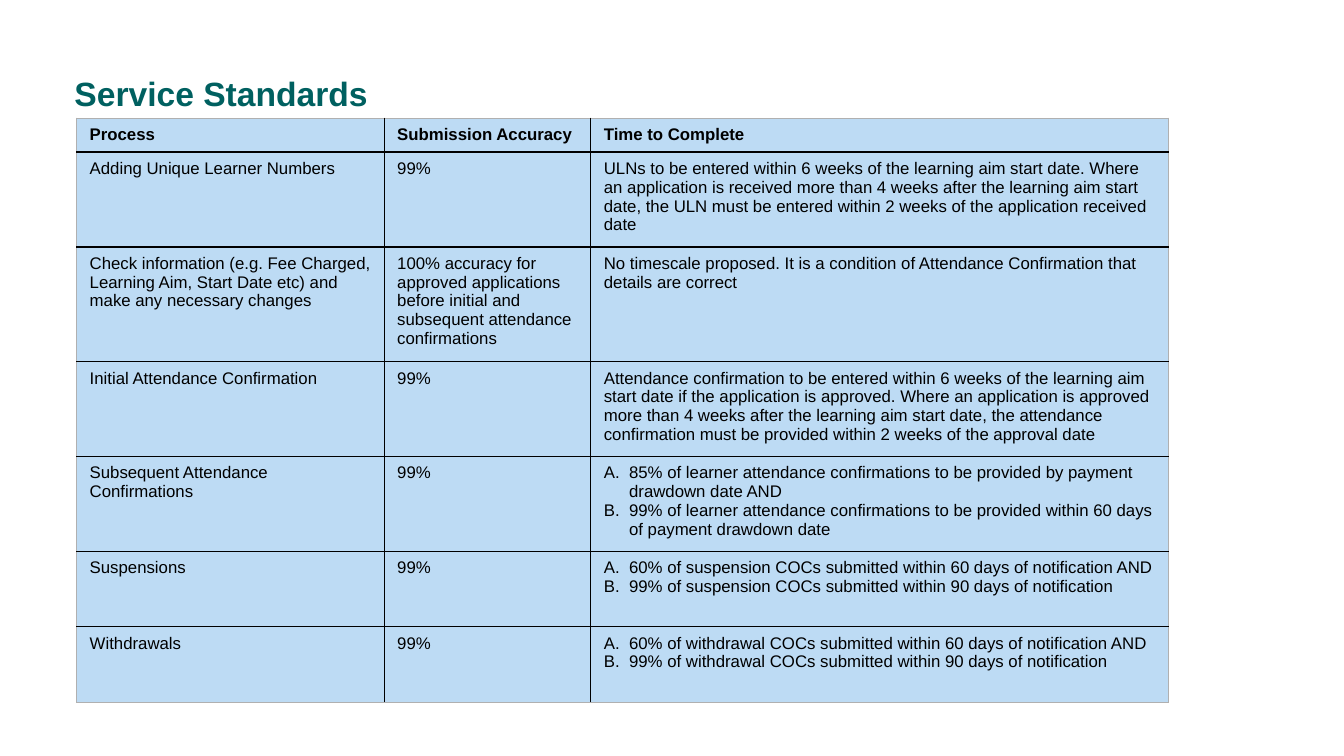
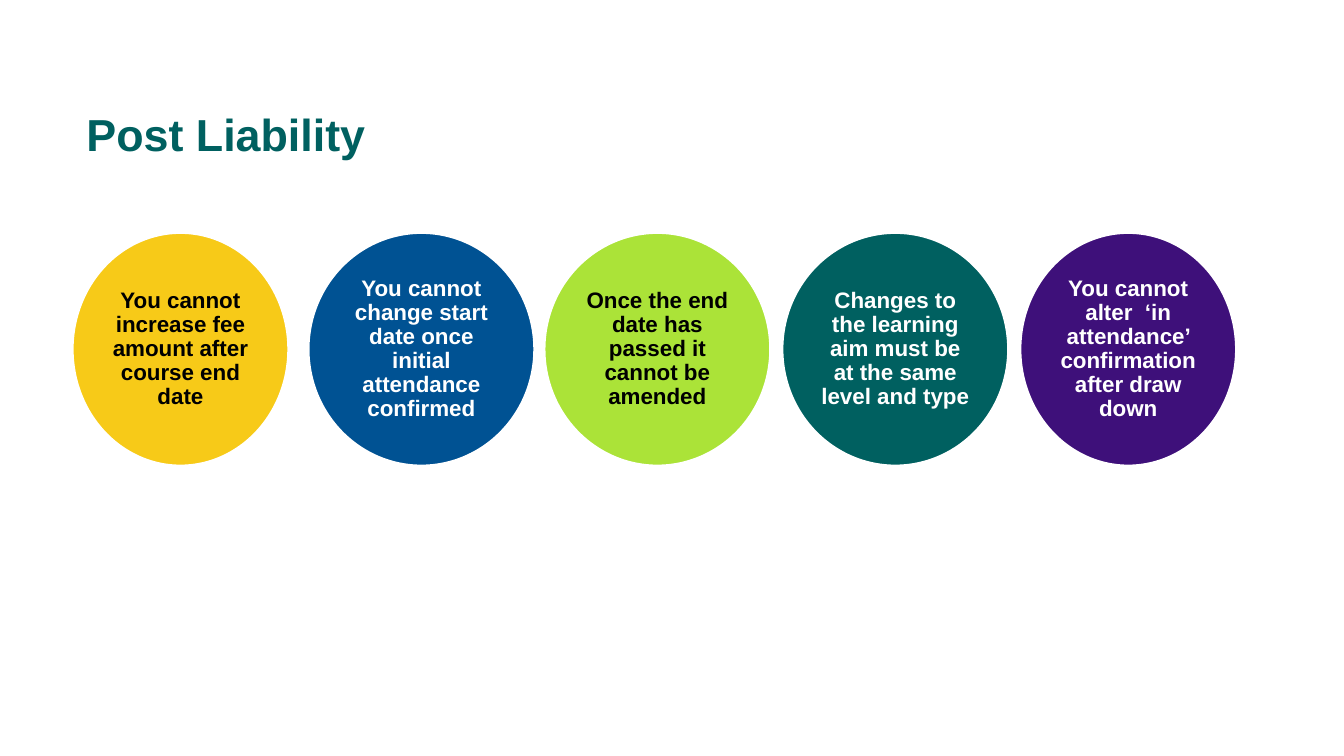
from lxml import etree
from pptx import Presentation
from pptx.dml.color import RGBColor
from pptx.enum import shapes, text
from pptx.oxml.ns import qn
from pptx.util import Inches, Pt

TEAL = RGBColor(0x00, 0x60, 0x60)
BLACK = RGBColor(0x00, 0x00, 0x00)
WHITE = RGBColor(0xFF, 0xFF, 0xFF)
GREY = RGBColor(0xB0, 0xB0, 0xB0)
PALE_BLUE = RGBColor(0xBD, 0xDB, 0xF4)
YELLOW = RGBColor(0xF7, 0xCA, 0x18)
BLUE = RGBColor(0x00, 0x52, 0x93)
LIME = RGBColor(0xAB, 0xE3, 0x38)
PURPLE = RGBColor(0x3E, 0x10, 0x7A)

STANDARDS = [
    ("Process", "Submission Accuracy", "Time to Complete"),
    ("Adding Unique Learner Numbers", "99%",
     "ULNs to be entered within 6 weeks of the learning aim start date. Where an "
     "application is received more than 4 weeks after the learning aim start date, "
     "the ULN must be entered within 2 weeks of the application received date"),
    ("Check information (e.g. Fee Charged, Learning Aim, Start Date etc) and make "
     "any necessary changes",
     "100% accuracy for approved applications before initial and subsequent "
     "attendance confirmations",
     "No timescale proposed. It is a condition of Attendance Confirmation that "
     "details are correct"),
    ("Initial Attendance Confirmation", "99%",
     "Attendance confirmation to be entered within 6 weeks of the learning aim start "
     "date if the application is approved. Where an application is approved more than "
     "4 weeks after the learning aim start date, the attendance confirmation must be "
     "provided within 2 weeks of the approval date"),
    ("Subsequent Attendance Confirmations", "99%",
     ["85% of learner attendance confirmations to be provided by payment drawdown "
      "date AND",
      "99% of learner attendance confirmations to be provided within 60 days of "
      "payment drawdown date"]),
    ("Suspensions", "99%",
     ["60% of suspension COCs submitted within 60 days of notification AND",
      "99% of suspension COCs submitted within 90 days of notification"]),
    ("Withdrawals", "99%",
     ["60% of withdrawal COCs submitted within 60 days of notification AND",
      "99% of withdrawal COCs submitted within 90 days of notification"]),
]
COLUMN_WIDTHS = [3.05, 2.05, 5.73]
ROW_HEIGHTS = [0.33, 0.93, 1.13, 0.93, 0.93, 0.75, 0.75]

RULES = [
    (0.72, 2.14, YELLOW, BLACK, "You cannot increase fee amount after course end date"),
    (3.06, 2.24, BLUE, WHITE,
     "You cannot change start date once initial attendance confirmed"),
    (5.4, 2.24, LIME, BLACK, "Once the end date has passed it cannot be amended"),
    (7.76, 2.24, TEAL, WHITE,
     "Changes to the learning aim must be at the same level and type"),
    (10.12, 2.14, PURPLE, WHITE,
     "You cannot alter  ‘in attendance’ confirmation after draw down"),
]


class Deck:
    FONT = "Arial"

    def __init__(self):
        self.prs = Presentation()
        self.prs.slide_width = Inches(13.33)
        self.prs.slide_height = Inches(7.5)
        self.s = None

    def slide(self):
        self.s = self.prs.slides.add_slide(self.prs.slide_layouts[6])

    def style(self, p, size, color, bold):
        for r in p.runs:
            r.font.name = self.FONT
            r.font.size = Pt(size)
            r.font.bold = bold
            r.font.color.rgb = color

    def title(self, words, left, top, height, size):
        sp = self.s.shapes.add_textbox(
            Inches(left), Inches(top), Inches(11.5), Inches(height))
        tf = sp.text_frame
        tf.word_wrap = True
        tf.vertical_anchor = text.MSO_ANCHOR.BOTTOM
        tf.text = words
        self.style(tf.paragraphs[0], size, TEAL, True)

    def border(self, cell, side, color, width):
        ln = etree.SubElement(cell._tc.get_or_add_tcPr(), qn(f"a:ln{side}"),
                              w=str(Pt(width)))
        fill = etree.SubElement(ln, qn("a:solidFill"))
        etree.SubElement(fill, qn("a:srgbClr"), val=str(color))

    def cell(self, cell, content, bold):
        cell.margin_left = cell.margin_right = Inches(0.13)
        cell.margin_top = cell.margin_bottom = Inches(0.07)
        cell.fill.solid()
        cell.fill.fore_color.rgb = PALE_BLUE
        lettered = isinstance(content, list)
        tf = cell.text_frame
        tf.text = "\n".join(content) if lettered else content
        for p in tf.paragraphs:
            if lettered:
                pPr = p._p.get_or_add_pPr()
                pPr.set("marL", str(Inches(0.25)))
                pPr.set("indent", str(-Inches(0.25)))
                etree.SubElement(pPr, qn("a:buAutoNum"), type="alphaUcPeriod")
            self.style(p, 12, BLACK, bold)

    def table(self, rows, widths, heights, left, top):
        tbl = self.s.shapes.add_table(
            len(rows), len(widths), Inches(left), Inches(top),
            Inches(sum(widths)), Inches(sum(heights))).table
        tbl.first_row = tbl.horz_banding = False
        for column, width in zip(tbl.columns, widths):
            column.width = Inches(width)
        for row, height in zip(tbl.rows, heights):
            row.height = Inches(height)
        outer = (GREY, 0.5)
        across = [outer, (BLACK, 1.5), (BLACK, 1.5)]
        across += [(BLACK, 1)] * (len(rows) - 3) + [outer]
        down = [outer] + [(BLACK, 1)] * (len(widths) - 1) + [outer]
        for i, row in enumerate(rows):
            for j, content in enumerate(row):
                cell = tbl.cell(i, j)
                edges = zip("LRTB", (down[j], down[j + 1], across[i], across[i + 1]))
                for side, edge in edges:
                    self.border(cell, side, *edge)
                self.cell(cell, content, i == 0)

    def circle(self, left, width, fill, color, words):
        sp = self.s.shapes.add_shape(
            shapes.MSO_SHAPE.OVAL, Inches(left), Inches(2.31),
            Inches(width), Inches(2.31))
        sp.shadow.inherit = False
        sp.fill.solid()
        sp.fill.fore_color.rgb = fill
        sp.line.color.rgb = WHITE
        sp.line.width = Pt(1.5)
        tf = sp.text_frame
        tf.word_wrap = True
        tf.vertical_anchor = text.MSO_ANCHOR.MIDDLE
        tf.margin_left = tf.margin_right = Inches(0.04)
        tf.margin_top = tf.margin_bottom = Inches(0.04)
        tf.text = words
        p = tf.paragraphs[0]
        p.alignment = text.PP_ALIGN.CENTER
        p.line_spacing = 0.9
        self.style(p, 16, color, True)


def main():
    deck = Deck()
    deck.slide()
    deck.title("Service Standards", 0.64, 0.67, 0.5, 24)
    deck.table(STANDARDS, COLUMN_WIDTHS, ROW_HEIGHTS, 0.76, 1.17)

    deck.slide()
    for rule in RULES:
        deck.circle(*rule)
    deck.title("Post Liability", 0.76, 1.04, 0.6, 32)
    deck.prs.save("out.pptx")


if __name__ == "__main__":
    main()
